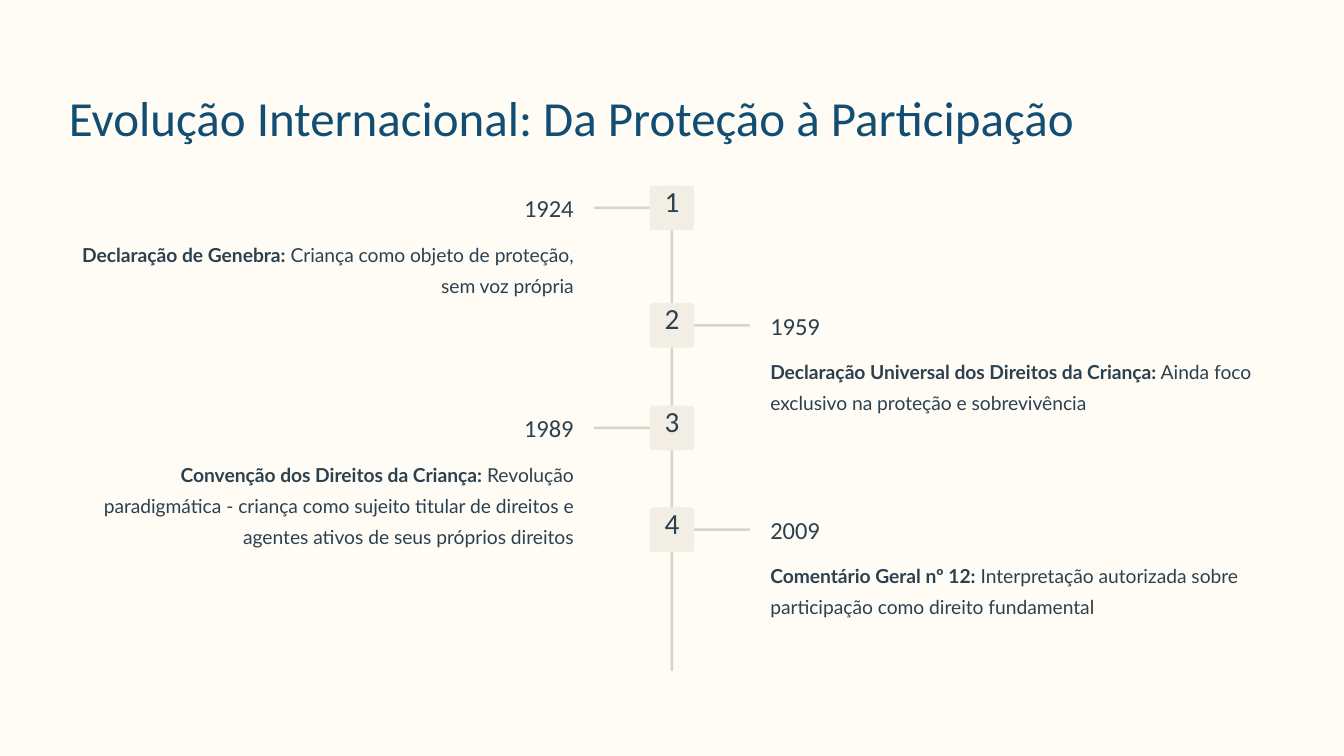
from dataclasses import dataclass

from pptx import Presentation
from pptx.dml.color import RGBColor
from pptx.enum import shapes, text
from pptx.slide import Slide
from pptx.text.text import TextFrame
from pptx.util import Inches, Pt

CREAM = RGBColor(0xFF, 0xFC, 0xF5)
NAVY = RGBColor(0x12, 0x4E, 0x73)
SLATE = RGBColor(0x2B, 0x41, 0x50)
RULE = RGBColor(0xD9, 0xD4, 0xC9)
BADGE = RGBColor(0xF3, 0xEE, 0xE3)

LEFT, RIGHT = text.PP_ALIGN.LEFT, text.PP_ALIGN.RIGHT
CENTER = text.PP_ALIGN.CENTER

MARGIN = 0.82
AXIS = 8.0
BADGE_SIZE = 0.53
BAR = 0.03
BRANCH = 0.7
YEAR_WIDTH = 2.93
DETAIL_WIDTH = 6.01
TEXT_GAP = 1.17  # from the axis to the text on either side


@dataclass(frozen=True)
class Style:
    font: str
    size: float
    leading: float
    color: RGBColor = SLATE


@dataclass(frozen=True)
class Milestone:
    top: float
    year: str
    document: str
    meaning: str
    detail_height: float = 0.75


TITLE = Style("Calibri", 42, 52.5, NAVY)
NUMBER = Style("Calibri", 25, 25)
YEAR = Style("Calibri", 21, 26)
DETAIL = Style("Lato", 16.5, 26.5)

MILESTONES = [
    Milestone(2.21, "1924", "Declaração de Genebra:",
              " Criança como objeto de proteção, sem voz própria"),
    Milestone(3.61, "1959", "Declaração Universal dos Direitos da Criança:",
              " Ainda foco exclusivo na proteção e sobrevivência"),
    Milestone(4.83, "1989", "Convenção dos Direitos da Criança:",
              " Revolução paradigmática - criança como sujeito titular de "
              "direitos e agentes ativos de seus próprios direitos", 1.12),
    Milestone(6.04, "2009", "Comentário Geral nº 12:",
              " Interpretação autorizada sobre participação como direito "
              "fundamental"),
]


def write(frame: TextFrame, style: Style, align: text.PP_ALIGN,
          *runs: tuple[str, bool]) -> None:
    """Fill a frame with one paragraph of (words, bold) runs."""
    frame.margin_left = frame.margin_right = 0
    frame.margin_top = frame.margin_bottom = 0
    frame.word_wrap = True
    frame.auto_size = text.MSO_AUTO_SIZE.NONE
    frame.vertical_anchor = text.MSO_ANCHOR.TOP
    paragraph = frame.paragraphs[0]
    paragraph.alignment = align
    paragraph.line_spacing = Pt(style.leading)
    paragraph.space_before = Pt(0)
    for words, bold in runs:
        run = paragraph.add_run()
        run.text = words
        run.font.name = style.font
        run.font.size = Pt(style.size)
        run.font.bold = bold
        run.font.color.rgb = style.color


def add_label(slide: Slide, left: float, top: float, width: float,
              height: float, style: Style, align: text.PP_ALIGN,
              *runs: tuple[str, bool]) -> None:
    label = slide.shapes.add_textbox(
        Inches(left), Inches(top), Inches(width), Inches(height))
    write(label.text_frame, style, align, *runs)


def add_block(slide: Slide, left: float, top: float, width: float,
              height: float, color: RGBColor, rounding: float = 0.5) -> None:
    block = slide.shapes.add_shape(
        shapes.MSO_SHAPE.ROUNDED_RECTANGLE,
        Inches(left), Inches(top), Inches(width), Inches(height))
    block.adjustments[0] = rounding
    block.shadow.inherit = False
    block.fill.solid()
    block.fill.fore_color.rgb = color
    block.line.fill.background()


def add_milestone(slide: Slide, number: int, milestone: Milestone) -> None:
    """Odd milestones stand left of the axis, even ones right of it."""
    on_left = number % 2 == 1
    top = milestone.top
    align = RIGHT if on_left else LEFT

    def beside(gap: float, width: float) -> float:
        return AXIS - gap - width if on_left else AXIS + gap

    # Branch and numbered badge
    add_block(slide, beside(0.23, BRANCH), top + 0.25, BRANCH, BAR, RULE)
    add_block(slide, AXIS - BADGE_SIZE / 2, top, BADGE_SIZE, BADGE_SIZE,
              BADGE, 0.067)
    add_label(slide, AXIS - 0.175, top + 0.04, 0.35, 0.44, NUMBER, CENTER,
              (str(number), False))

    # Year and description
    add_label(slide, beside(TEXT_GAP, YEAR_WIDTH), top + 0.08, YEAR_WIDTH,
              0.37, YEAR, align, (milestone.year, False))
    add_label(slide, beside(TEXT_GAP, DETAIL_WIDTH), top + 0.59, DETAIL_WIDTH,
              milestone.detail_height, DETAIL, align,
              (milestone.document, True), (milestone.meaning, False))


def main() -> None:
    deck = Presentation()
    deck.slide_width, deck.slide_height = Inches(16), Inches(9)
    slide = deck.slides.add_slide(deck.slide_layouts[5])
    slide.background.fill.solid()
    slide.background.fill.fore_color.rgb = CREAM

    # Title
    heading = slide.shapes.title
    heading.left, heading.top = Inches(MARGIN), Inches(1.01)
    heading.width, heading.height = Inches(14.32), Inches(0.73)
    write(heading.text_frame, TITLE, LEFT,
          ("Evolução Internacional: Da Proteção à Participação", False))

    # Timeline
    add_block(slide, AXIS - BAR / 2, 2.21, BAR, 5.78, RULE)
    for number, milestone in enumerate(MILESTONES, start=1):
        add_milestone(slide, number, milestone)

    deck.save("out.pptx")


if __name__ == "__main__":
    main()
